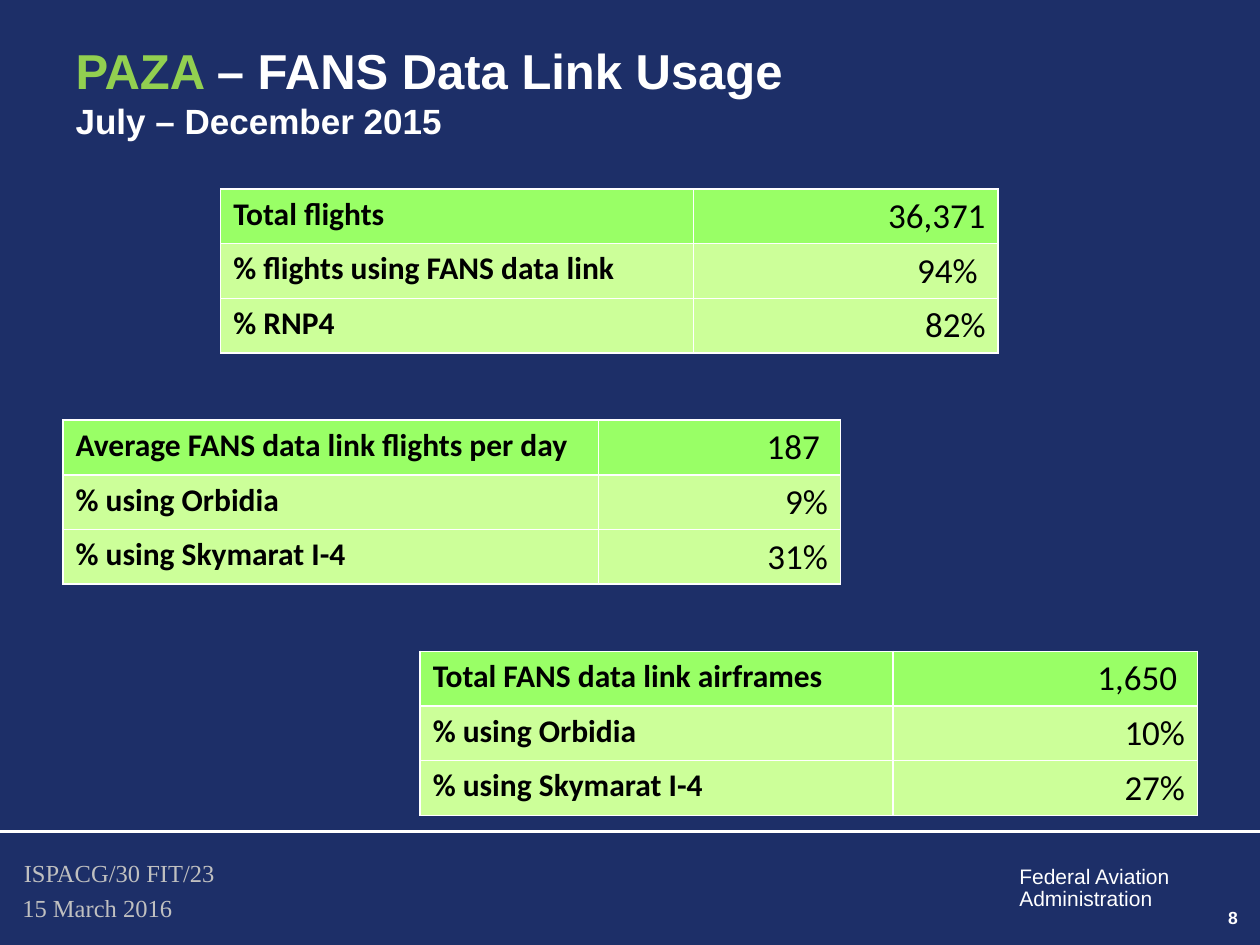
import copy
from dataclasses import dataclass

import pptx
import pptx.dml.color
import pptx.enum.shapes
import pptx.enum.text
import pptx.oxml
import pptx.oxml.ns
import pptx.util
from pptx.dml.color import RGBColor
from pptx.util import Cm

NAVY = RGBColor(0x1D, 0x2F, 0x68)
WHITE = RGBColor(0xFF, 0xFF, 0xFF)
BLACK = RGBColor(0x00, 0x00, 0x00)
SILVER = RGBColor(0xC0, 0xC0, 0xC0)
LEAF = RGBColor(0x92, 0xD0, 0x50)
HEADER_GREEN = RGBColor(0x99, 0xFF, 0x66)
BODY_GREEN = RGBColor(0xCC, 0xFF, 0x99)

ALIGN = pptx.enum.text.PP_ALIGN
ANCHOR = pptx.enum.text.MSO_ANCHOR
ROW_HEIGHT = Cm(1.1)
TABLE_WIDTH = 15.67
VALUE_INSET = 0.25
WIDE_INSET = 0.41


@dataclass
class Row:
    label: str
    value: str
    inset: float = VALUE_INSET


@dataclass
class UsageTable:
    left: float
    top: float
    label_width: float
    rows: list[Row]


@dataclass
class Note:
    left: float
    top: float
    width: float
    height: float
    lines: list[str]
    size: int
    font: str
    color: RGBColor
    bold: bool = False
    align: ALIGN = ALIGN.LEFT
    spacing: float = 1.0


TABLES = [
    UsageTable(4.45, 3.81, 9.53, [
        Row("Total flights", "36,371"),
        Row("% flights using FANS data link", "94%", WIDE_INSET),
        Row("% RNP4", "82%"),
    ]),
    UsageTable(1.27, 8.47, 10.8, [
        Row("Average FANS data link flights per day", "187", WIDE_INSET),
        Row("% using Orbidia", "9%"),
        Row("% using Skymarat I-4", "31%"),
    ]),
    UsageTable(8.47, 13.13, 9.53, [
        Row("Total FANS data link airframes", "1,650", WIDE_INSET),
        Row("% using Orbidia", "10%"),
        Row("% using Skymarat I-4", "27%"),
    ]),
]

NOTES = [
    Note(20.3, 17.37, 3.7, 1.12, ["Federal Aviation", "Administration"],
         12, "Arial", WHITE, spacing=0.85),
    Note(0.23, 17.17, 13.28, 0.86, ["ISPACG/30 FIT/23"], 14, "Times New Roman", SILVER),
    Note(0.2, 17.88, 10.39, 0.86, ["15 March 2016"], 14, "Times New Roman", SILVER),
    Note(20.96, 18.16, 4.24, 0.8, ["8"], 10, "Arial", WHITE, True, ALIGN.RIGHT),
]


def add_span(para, text: str, size: int, font: str, color: RGBColor, bold: bool):
    span = para.add_run()
    span.text = text
    span.font.size = pptx.util.Pt(size)
    span.font.name = font
    span.font.color.rgb = color
    span.font.bold = bold
    return span


def add_title(page) -> None:
    box = page.shapes.title
    box.left, box.top, box.width, box.height = Cm(1.27), Cm(1.07), Cm(22.86), Cm(1.52)
    frame = box.text_frame
    frame.auto_size = pptx.enum.text.MSO_AUTO_SIZE.NONE
    frame.vertical_anchor = ANCHOR.MIDDLE
    para = frame.paragraphs[0]
    para.alignment = ALIGN.LEFT
    add_span(para, "PAZA ", 28, "Arial", LEAF, True)
    span = add_span(para, "– FANS Data Link Usage", 28, "Arial", WHITE, True)
    para.add_line_break()
    # The break keeps the size of the line it ends
    para._p[-1].append(copy.deepcopy(span._r.rPr))
    add_span(para, "July – December 2015", 20, "Arial", WHITE, True)


def add_note(page, note: Note) -> None:
    box = page.shapes.add_textbox(Cm(note.left), Cm(note.top), Cm(note.width), Cm(note.height))
    frame = box.text_frame
    frame.word_wrap = True
    for index, line in enumerate(note.lines):
        para = frame.add_paragraph() if index else frame.paragraphs[0]
        para.alignment = note.align
        para.line_spacing = note.spacing
        add_span(para, line, note.size, note.font, note.color, note.bold)


def set_borders(cell) -> None:
    properties = cell._tc.get_or_add_tcPr()
    for index, side in enumerate(("lnL", "lnR", "lnT", "lnB")):
        border = pptx.oxml.parse_xml(
            f'<a:{side} {pptx.oxml.ns.nsdecls("a")} w="12700"><a:solidFill>'
            f'<a:srgbClr val="{WHITE}"/></a:solidFill></a:{side}>')
        properties.insert(index, border)


def add_usage_table(page, usage: UsageTable) -> None:
    count = len(usage.rows)
    table = page.shapes.add_table(count, 2, Cm(usage.left), Cm(usage.top),
                                  Cm(TABLE_WIDTH), ROW_HEIGHT * count).table
    table.columns[0].width = Cm(usage.label_width)
    table.columns[1].width = Cm(TABLE_WIDTH - usage.label_width)
    for index, row in enumerate(usage.rows):
        label, value = table.cell(index, 0), table.cell(index, 1)
        for cell in (label, value):
            cell.fill.solid()
            cell.fill.fore_color.rgb = BODY_GREEN if index else HEADER_GREEN
            set_borders(cell)
        add_span(label.text_frame.paragraphs[0], row.label, 18, "Calibri", BLACK, True)
        value.vertical_anchor = ANCHOR.BOTTOM
        value.margin_right = Cm(row.inset)
        para = value.text_frame.paragraphs[0]
        para.alignment = ALIGN.RIGHT
        add_span(para, row.value, 20, "Calibri", BLACK, False)


def add_footer_line(page) -> None:
    line = page.shapes.add_connector(pptx.enum.shapes.MSO_CONNECTOR.STRAIGHT,
                                     Cm(0), Cm(16.76), Cm(25.4), Cm(16.76))
    line.line.color.rgb = WHITE
    line.line.width = pptx.util.Pt(1.5)
    line._element.spPr.append(
        pptx.oxml.parse_xml(f'<a:effectLst {pptx.oxml.ns.nsdecls("a")}/>'))


def main() -> None:
    deck = pptx.Presentation()
    deck.slide_width, deck.slide_height = Cm(25.4), Cm(19.05)
    page = deck.slides.add_slide(deck.slide_layouts[5])
    page.background.fill.solid()
    page.background.fill.fore_color.rgb = NAVY

    # Heading
    add_title(page)

    # Footer
    add_footer_line(page)
    for note in NOTES:
        add_note(page, note)

    # Usage figures
    for usage in TABLES:
        add_usage_table(page, usage)

    deck.save("out.pptx")


if __name__ == "__main__":
    main()
